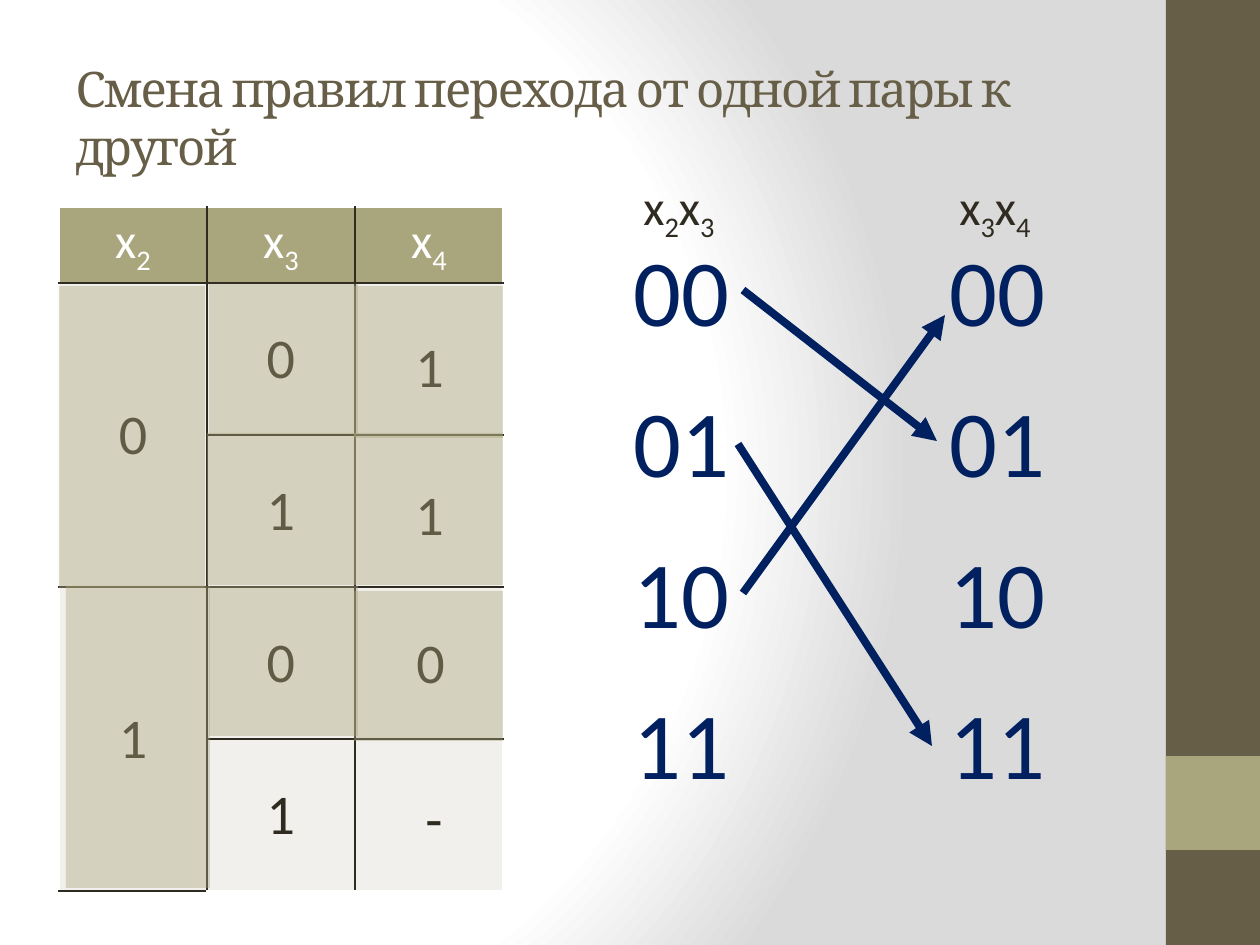
"""Build the slide on changing the transition rules between pairs of variables."""
from lxml.etree import SubElement
from pptx import Presentation
from pptx.dml.color import RGBColor
from pptx.enum.shapes import MSO_CONNECTOR, MSO_SHAPE
from pptx.enum.text import MSO_ANCHOR, MSO_AUTO_SIZE, PP_ALIGN
from pptx.oxml import parse_xml
from pptx.oxml.ns import nsdecls, qn
from pptx.util import Emu, Pt

COLORS = {
    "ink": "2F2B20",
    "brown": "675E47",
    "olive": "A9A57C",
    "pale": "F1F0EC",
    "white": "FFFFFF",
    "gray": "DADADA",
    "navy": "002060",
}


def px(length):
    return Emu(round(length * 914400 / 126))


class SlideBuilder:
    def __init__(self, deck):
        self.body_font = "Calibri"
        self.title_font = "Cambria"
        self.slide = deck.slides.add_slide(deck.slide_layouts[5])

    def color(self, name):
        return RGBColor.from_string(COLORS[name])

    def background(self):
        stops = "".join(
            f'<a:gs pos="{position}"><a:srgbClr val="{COLORS[name]}"/></a:gs>'
            for position, name in ((0, "white"), (75000, "white"), (100000, "gray"))
        )
        backdrop = parse_xml(
            f'<p:bg {nsdecls("p", "a")}><p:bgPr><a:gradFill rotWithShape="1">'
            f'<a:gsLst>{stops}</a:gsLst><a:path path="circle">'
            '<a:fillToRect l="20000" t="50000" r="100000" b="50000"/></a:path>'
            '</a:gradFill><a:effectLst/></p:bgPr></p:bg>'
        )
        self.slide.element.cSld.insert(0, backdrop)

    def fill_paragraph(self, paragraph, text, size, color, font=None):
        is_variable = text.startswith("x")
        for part in text if is_variable else [text]:
            run = paragraph.add_run()
            run.text = part
            if is_variable and part.isdigit():
                run._r.get_or_add_rPr().set("baseline", "-25000")
        paragraph.font.name = font or self.body_font
        paragraph.font.size = Pt(size)
        paragraph.font.color.rgb = self.color(color)

    def title(self, text, left, top, width, height):
        heading = self.slide.shapes.title
        heading.left, heading.top = px(left), px(top)
        heading.width, heading.height = px(width), px(height)
        heading.text_frame.vertical_anchor = MSO_ANCHOR.MIDDLE
        paragraph = heading.text_frame.paragraphs[0]
        paragraph.alignment = PP_ALIGN.LEFT
        self.fill_paragraph(paragraph, text, 28, "brown", self.title_font)
        paragraph.runs[0]._r.get_or_add_rPr().set("spc", "-100")

    def label(self, text, left, top, width, height, size, color="ink"):
        box = self.slide.shapes.add_textbox(px(left), px(top), px(width), px(height))
        box.text_frame.word_wrap = False
        box.text_frame.auto_size = MSO_AUTO_SIZE.SHAPE_TO_FIT_TEXT
        self.fill_paragraph(box.text_frame.paragraphs[0], text, size, color)

    def block(self, left, top, width, height, color, opacity=100):
        rectangle = self.slide.shapes.add_shape(
            MSO_SHAPE.RECTANGLE, px(left), px(top), px(width), px(height))
        rectangle.shadow.inherit = False
        rectangle.line.fill.background()
        rectangle.fill.solid()
        rectangle.fill.fore_color.rgb = self.color(color)
        if opacity < 100:
            tint = rectangle.fill._xPr.find(qn("a:solidFill"))[0]
            SubElement(tint, qn("a:alpha")).set("val", str(opacity * 1000))

    def arrow(self, start, end):
        connector = self.slide.shapes.add_connector(
            MSO_CONNECTOR.STRAIGHT, *map(px, start + end))
        connector.line.color.rgb = self.color("navy")
        connector.line.width = Pt(4.5)
        SubElement(connector.line._get_or_add_ln(), qn("a:tailEnd")).set("type", "triangle")
        SubElement(connector._element.spPr, qn("a:effectLst"))

    def border(self, cell, side, color):
        cell._tc.get_or_add_tcPr().append(parse_xml(
            f'<a:ln{side} {nsdecls("a")} w="12700"><a:solidFill>'
            f'<a:srgbClr val="{COLORS[color]}"/></a:solidFill></a:ln{side}>'))

    def table(self, rows, left, top, column_width, row_heights):
        last_row, last_column = len(rows) - 1, len(rows[0]) - 1
        grid = self.slide.shapes.add_table(
            len(rows), len(rows[0]), px(left), px(top),
            px(column_width * len(rows[0])), px(sum(row_heights))).table
        grid.first_row = grid.horz_banding = False
        for column in grid.columns:
            column.width = px(column_width)
        for r, values in enumerate(rows):
            grid.rows[r].height = px(row_heights[r])
            for c, value in enumerate(values):
                cell = grid.cell(r, c)
                edges = {"L": c == 0, "R": c == last_column, "T": r == 0, "B": r == last_row}
                for side, is_outer in edges.items():
                    self.border(cell, side, "white" if is_outer else "ink")
                cell.fill.solid()
                cell.fill.fore_color.rgb = self.color("pale" if r else "olive")
                cell.vertical_anchor = MSO_ANCHOR.MIDDLE
                cell.margin_left = cell.margin_right = px(9)
                cell.margin_top = cell.margin_bottom = 0
                if value:
                    paragraph = cell.text_frame.paragraphs[0]
                    paragraph.alignment = PP_ALIGN.CENTER
                    self.fill_paragraph(
                        paragraph, value, 32 if r else 28, "ink" if r else "white")
        for r in (1, 3):
            grid.cell(r, 0).merge(grid.cell(r + 1, 0))


def main():
    deck = Presentation()
    deck.slide_width, deck.slide_height = px(1260), px(945)
    builder = SlideBuilder(deck)
    builder.background()
    builder.block(1166, 0, 94, 945, "brown")
    builder.block(1166, 756, 94, 94, "olive")
    builder.title("Смена правил перехода от одной пары к другой", 63, 38, 1050, 158)

    truth_rows = [
        ("x2", "x3", "x4"),
        ("0", "0", ""),
        ("", "1", ""),
        ("1", "0", ""),
        ("", "1", ""),
    ]
    builder.table(truth_rows, 59, 207, 148, [76] + [152] * 4)
    for value, left, top in (("1", 403, 325), ("1", 403, 473), ("0", 404, 621), ("-", 413, 777)):
        builder.label(value, left, top, 54, 81, 32)

    covers = [
        (59, 286, 146, 302), (66, 586, 144, 302),
        (209, 284, 149, 150), (207, 433, 149, 152), (209, 586, 149, 150),
        (354, 286, 149, 152), (354, 433, 149, 152), (354, 591, 149, 150),
    ]
    for cover in covers:
        builder.block(*cover, "olive", opacity=40)

    for pair, left in (("x2x3", 621), ("x3x4", 937)):
        builder.label(pair, left + 10, 170, 102, 72, 28)
        for step, code in enumerate(("00", "01", "10", "11")):
            builder.label(code, left, 226 + 151 * step, 122, 127, 54, "navy")

    transitions = [
        ((743, 290), (937, 441)),
        ((738, 444), (932, 746)),
        ((743, 593), (945, 315)),
    ]
    for start, end in transitions:
        builder.arrow(start, end)
    deck.save("out.pptx")


if __name__ == "__main__":
    main()
